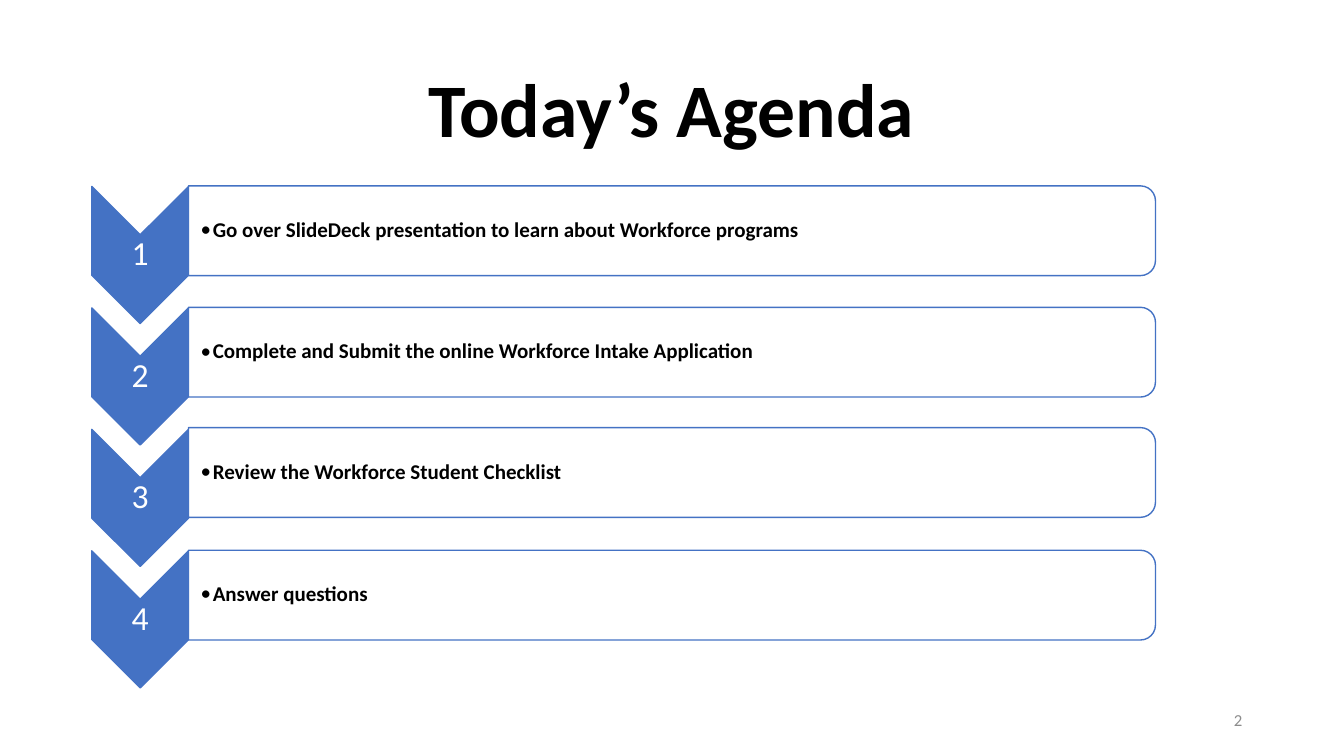
import pptx
import pptx.dml.color
import pptx.enum.shapes
import pptx.enum.text
import pptx.oxml.ns
import pptx.util
from lxml import etree

Inches = pptx.util.Inches
SHAPE = pptx.enum.shapes.MSO_SHAPE
ALIGN = pptx.enum.text.PP_ALIGN
qn = pptx.oxml.ns.qn
rgb = pptx.dml.color.RGBColor.from_string

# Grid: a narrow column of chevrons, then bars ten columns wide
MARGIN = 0.91
COLUMN = 0.96
ROW = 1.205
FIRST_CHEVRON = 2.53
CHEVRON_LENGTH = 1.36
BAR_HEIGHT = 0.89
BAR_LEFT = MARGIN + COLUMN
BAR_WIDTH = 10 * COLUMN - 0.01
BLUE = "4472C4"

# Each step with the height of its bar's middle, in rows above its chevron's middle
agenda = [
    ("Go over SlideDeck presentation to learn about Workforce programs", 0.2),
    ("Complete and Submit the online Workforce Intake Application", 0.2),
    ("Review the Workforce Student Checklist", 0.21),
    ("Answer questions", 0.2),
]


def add_upright(preset, left, middle, width, height, color):
    """Add a blue-edged preset turned a quarter, sized as it looks once turned."""
    shape = slide.shapes.add_shape(
        preset, Inches(left + (width - height) / 2), Inches(middle - width / 2),
        Inches(height), Inches(width))
    shape.rotation = 90
    shape.shadow.inherit = False
    shape.fill.solid()
    shape.fill.fore_color.rgb = rgb(color)
    shape.line.color.rgb = rgb(BLUE)
    shape.line.width = pptx.util.Pt(1)
    return shape


def add_label(text, left, middle, width, height, size, color, align, bold=False, inset=0.02):
    """Add a text box centred on a height and return its paragraph."""
    box = slide.shapes.add_textbox(
        Inches(left), Inches(middle - height / 2), Inches(width), Inches(height))
    frame = box.text_frame
    frame.word_wrap = True
    frame.vertical_anchor = pptx.enum.text.MSO_ANCHOR.MIDDLE
    frame.margin_left = frame.margin_right = Inches(inset)
    frame.margin_top = frame.margin_bottom = Inches(0.01)
    frame.text = text
    paragraph = frame.paragraphs[0]
    paragraph.alignment = align
    paragraph.line_spacing = 0.9
    font = paragraph.runs[0].font
    font.name, font.size, font.bold = "Calibri", pptx.util.Pt(size), bold
    font.color.rgb = rgb(color)
    return paragraph


deck = pptx.Presentation()
deck.slide_width, deck.slide_height = Inches(13.33), Inches(7.5)
slide = deck.slides.add_slide(deck.slide_layouts[6])

add_label("Today’s Agenda", MARGIN, 1.125, 11.5, 1.45, 54, "000000", ALIGN.CENTER,
          bold=True, inset=0.1)

for index, (step, rise) in enumerate(agenda):
    chevron_middle = FIRST_CHEVRON + index * ROW
    bar_middle = chevron_middle - rise * ROW

    add_upright(SHAPE.CHEVRON, MARGIN, chevron_middle, COLUMN, CHEVRON_LENGTH, BLUE)
    add_label(str(index + 1), MARGIN, chevron_middle, COLUMN, 0.41, 24, "FFFFFF", ALIGN.CENTER)

    bar = add_upright(SHAPE.ROUND_2_SAME_RECTANGLE, BAR_LEFT, bar_middle,
                      BAR_WIDTH, BAR_HEIGHT, "FFFFFF")
    bar_fill = bar.element.spPr.find(qn("a:solidFill"))
    etree.SubElement(bar_fill[0], qn("a:alpha"), val="90000")

    item = add_label(step, BAR_LEFT, bar_middle, BAR_WIDTH, 0.8, 15, "000000", ALIGN.LEFT,
                     bold=True, inset=0.12)
    properties = item._p.get_or_add_pPr()
    properties.set("marL", str(Inches(0.12)))
    properties.set("indent", str(-Inches(0.12)))
    etree.SubElement(properties, qn("a:buFont"), typeface="Calibri")
    etree.SubElement(properties, qn("a:buChar"), char="•")

add_label("2", 9.42, 7.15, 3, 0.4, 12, "8C8C8C", ALIGN.RIGHT, inset=0.1)

deck.save("out.pptx")
